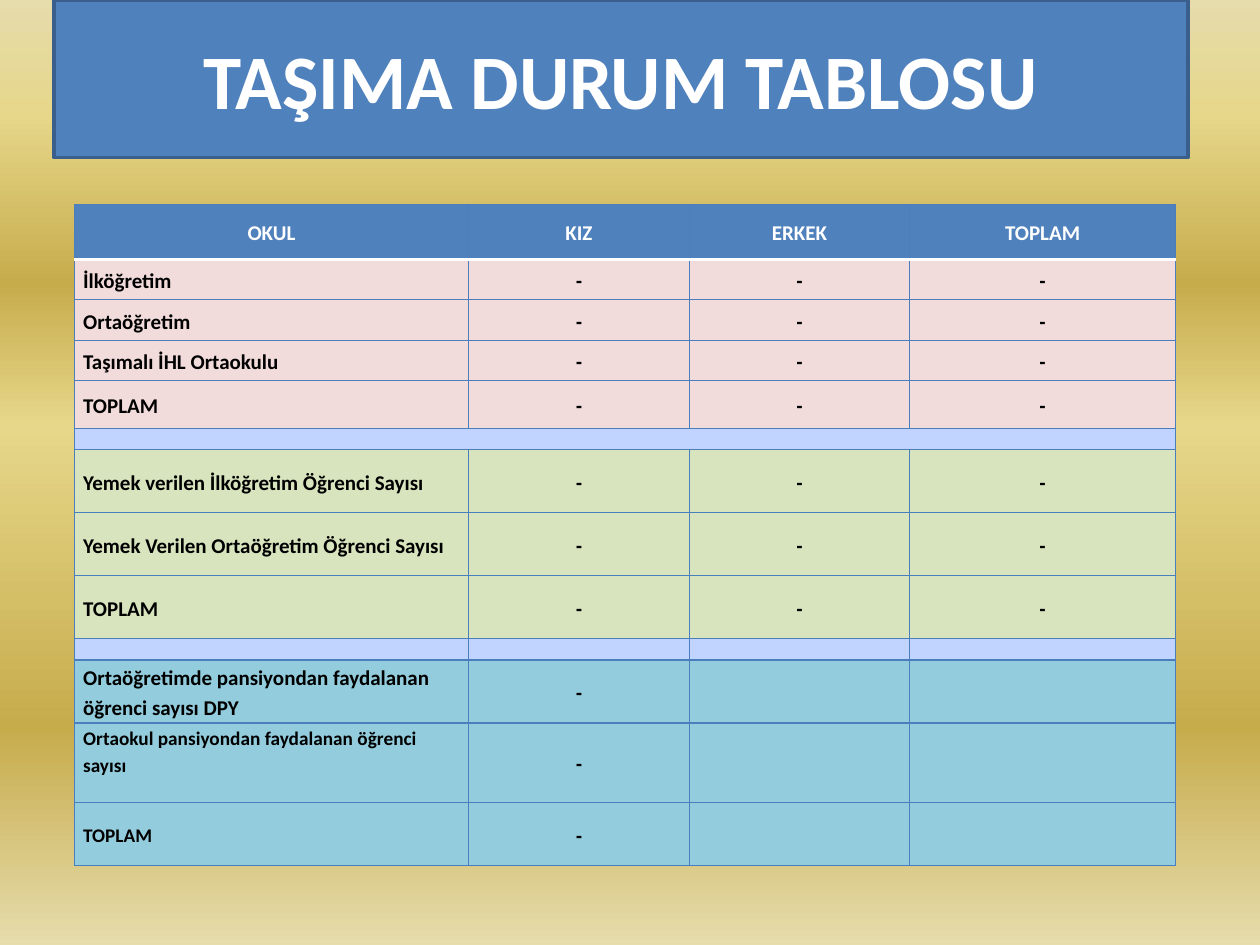
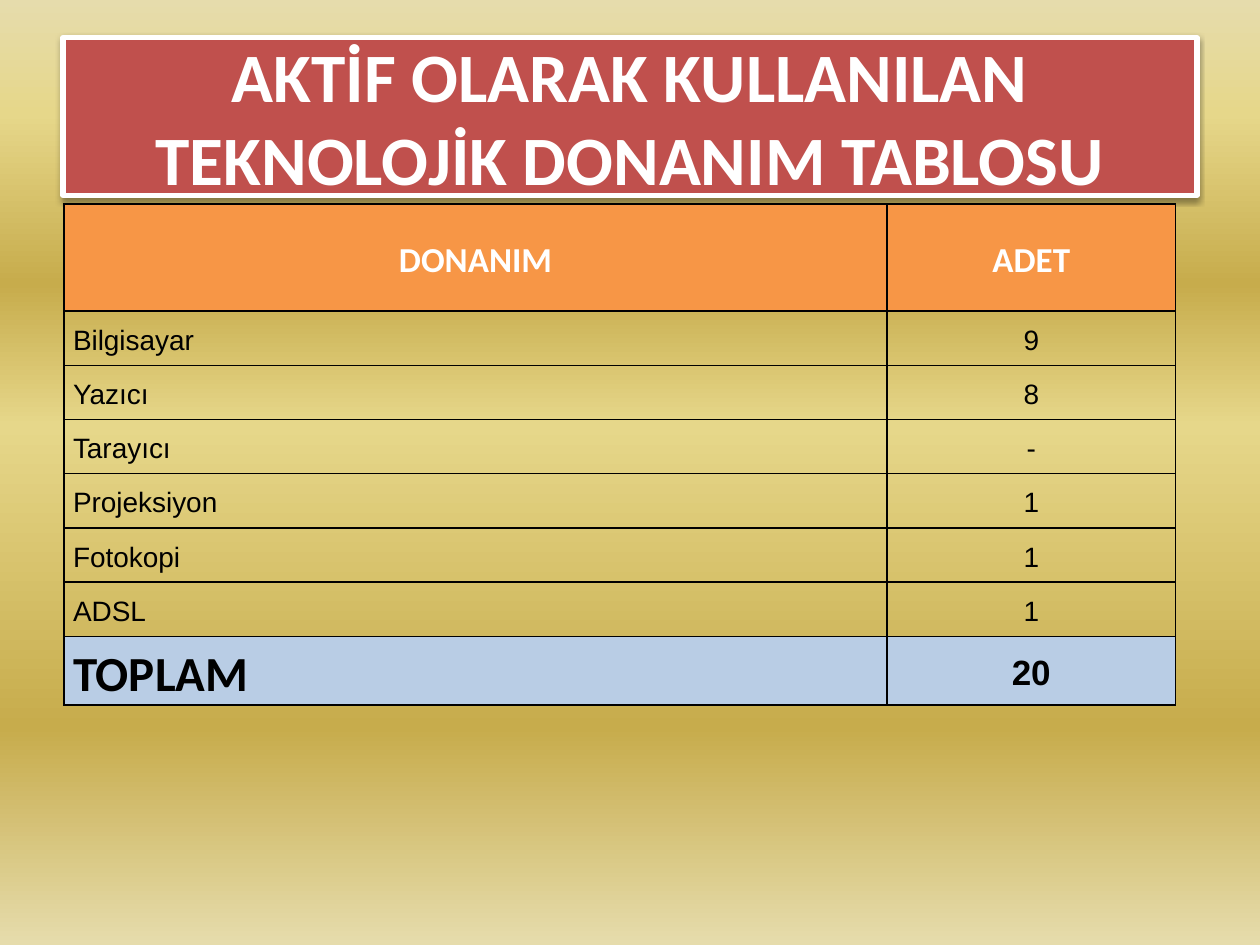
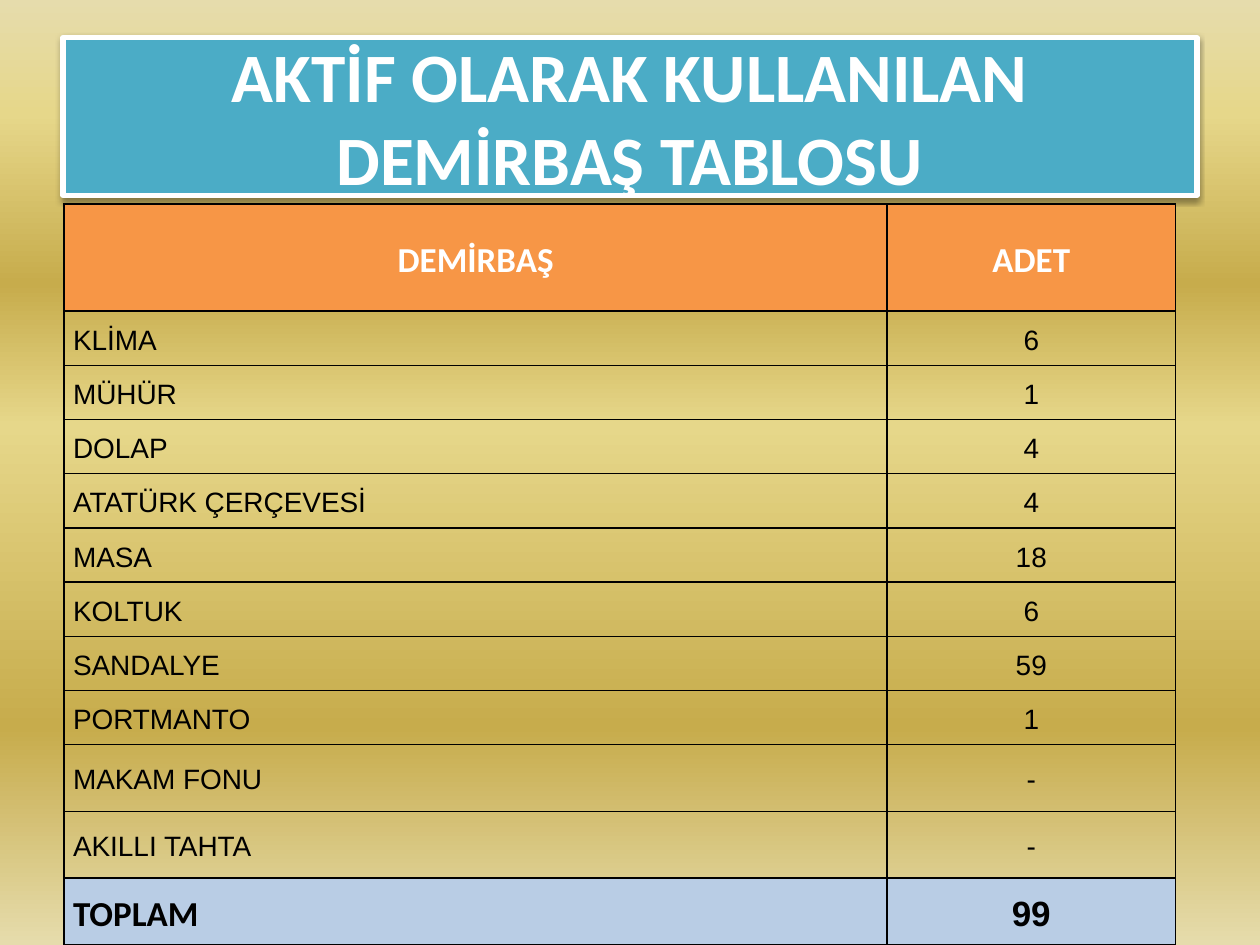
from lxml import etree
from pptx import Presentation
from pptx.dml.color import RGBColor
from pptx.enum import text
from pptx.oxml import ns
from pptx.util import Inches, Pt

WHITE = RGBColor(0xFF, 0xFF, 0xFF)
BLACK = RGBColor(0, 0, 0)
BLUE = RGBColor(0x4F, 0x81, 0xBD)
DARK_BLUE = RGBColor(0x3A, 0x5F, 0x8C)
GRID_BLUE = RGBColor(0x4B, 0x7E, 0xBC)
RED = RGBColor(0xC0, 0x50, 0x4D)
AQUA = RGBColor(0x4B, 0xAC, 0xC6)
ORANGE = RGBColor(0xF7, 0x96, 0x46)
PALE_BLUE = RGBColor(0xB9, 0xCD, 0xE5)
SPACER_BLUE = RGBColor(0xC0, 0xD4, 0xFF)
PINK = RGBColor(0xF2, 0xDC, 0xDB)
GREEN = RGBColor(0xD7, 0xE4, 0xBD)
TEAL = RGBColor(0x93, 0xCD, 0xDD)
GOLD_LIGHT = RGBColor(0xE6, 0xDC, 0xAC)
GOLD = RGBColor(0xE6, 0xD7, 0x8A)
GOLD_DARK = RGBColor(0xC7, 0xAC, 0x4C)
BACKDROP = [(0, GOLD_LIGHT), (12, GOLD), (30, GOLD_DARK),
            (45, GOLD), (77, GOLD_DARK), (100, GOLD_LIGHT)]

HEADING_FONT = "Calibri"
BODY_FONT = "Arial"
CENTER = text.PP_ALIGN.CENTER
LEFT = text.PP_ALIGN.LEFT
MIDDLE = text.MSO_ANCHOR.MIDDLE


def add_xml(parent, tag, **attributes):
    values = {key: str(value) for key, value in attributes.items()}
    return etree.SubElement(parent, ns.qn(tag), values)


def write(frame, words, size=11, font=BODY_FONT, color=BLACK, bold=False,
          align=LEFT, spacing=1.0):
    paragraph = frame.paragraphs[0]
    paragraph.alignment = align
    paragraph.line_spacing = spacing
    if not words:
        # The end mark keeps an empty row from growing to the default size.
        add_xml(paragraph._p, "a:endParaRPr", sz=size * 100)
        return
    run = paragraph.add_run()
    run.text = words
    run.font.size, run.font.name, run.font.bold = Pt(size), font, bold
    run.font.color.rgb = color


def border(cell, **sides):
    """Draw cell borders; each side (L, R, T, B) is a (color, points) pair."""
    properties = cell._tc.get_or_add_tcPr()
    for position, side in enumerate(s for s in "LRTB" if s in sides):
        color, points = sides[side]
        line = add_xml(properties, f"a:ln{side}", w=Pt(points))
        add_xml(add_xml(line, "a:solidFill"), "a:srgbClr", val=color)
        properties.insert(position, line)


class Deck:
    def __init__(self):
        self.presentation = Presentation()
        self.presentation.slide_width = Inches(10)
        self.presentation.slide_height = Inches(7.5)
        self.slide = None
        self.paint_backdrop()

    def paint_backdrop(self):
        fill = self.presentation.slide_master.background.fill
        fill.gradient()
        fill.gradient_angle = 270
        stops = fill._fill._gradFill.find(ns.qn("a:gsLst"))
        for stop in list(stops):
            stops.remove(stop)
        for percent, color in BACKDROP:
            stop = add_xml(stops, "a:gs", pos=percent * 1000)
            add_xml(stop, "a:srgbClr", val=color)

    def new_slide(self):
        title_only = self.presentation.slide_layouts[5]
        self.slide = self.presentation.slides.add_slide(title_only)

    def title(self, words, left, top, size, fill, line, line_width, shadow=False):
        banner = self.slide.shapes.title
        banner.left, banner.top = Inches(left), Inches(top)
        banner.width, banner.height = Inches(9), Inches(1.25)
        banner.fill.solid()
        banner.fill.fore_color.rgb = fill
        banner.line.color.rgb = line
        banner.line.width = Pt(line_width)
        frame = banner.text_frame
        frame.auto_size = text.MSO_AUTO_SIZE.NONE
        frame.word_wrap = True
        frame.vertical_anchor = MIDDLE
        write(frame, words, size=size, font=HEADING_FONT, color=WHITE,
              bold=True, align=CENTER)
        if shadow:
            effects = add_xml(banner._element.spPr, "a:effectLst")
            drop = add_xml(effects, "a:outerShdw", blurRad=Pt(3.1), dist=Pt(1.6),
                           dir=90 * 60000, rotWithShape=0)
            add_xml(add_xml(drop, "a:srgbClr", val=BLACK), "a:alpha", val=38000)

    def table(self, left, columns, heights):
        table = self.slide.shapes.add_table(
            len(heights), len(columns), Inches(left), Inches(1.62),
            Inches(sum(columns)), Inches(sum(heights))).table
        table.first_row = table.horz_banding = False
        for column, width in zip(table.columns, columns):
            column.width = Inches(width)
        for row, height in zip(table.rows, heights):
            row.height = Inches(height)
        return table

    def cell(self, cell, words, fill, edges, anchor=MIDDLE, **style):
        cell.margin_left = cell.margin_right = Inches(0.07)
        cell.margin_top = cell.margin_bottom = 0
        cell.vertical_anchor = anchor
        if fill is None:
            cell.fill.background()
        else:
            cell.fill.solid()
            cell.fill.fore_color.rgb = fill
        border(cell, **edges)
        write(cell.text_frame, words, spacing=1.15, **style)


def transport_slide(deck):
    deck.new_slide()
    deck.title("TAŞIMA DURUM TABLOSU", 0.43, 0, 44, BLUE, DARK_BLUE, 2)
    # Each row: height, fill, label, label size, number of dashes.
    rows = [
        (0.32, PINK, "İlköğretim", 12, 3),
        (0.32, PINK, "Ortaöğretim", 12, 3),
        (0.32, PINK, "Taşımalı İHL Ortaokulu", 12, 3),
        (0.38, PINK, "TOPLAM", 12, 3),
        (0.17, SPACER_BLUE, "", 8, 0),
        (0.5, GREEN, "Yemek verilen İlköğretim Öğrenci Sayısı", 12, 3),
        (0.5, GREEN, "Yemek Verilen Ortaöğretim Öğrenci Sayısı", 12, 3),
        (0.5, GREEN, "TOPLAM", 12, 3),
        (0.17, SPACER_BLUE, "", 8, 0),
        (0.5, TEAL, "Ortaöğretimde pansiyondan faydalanan öğrenci sayısı DPY", 12, 1),
        (0.63, TEAL, "Ortaokul pansiyondan faydalanan öğrenci sayısı", 11, 1),
        (0.5, TEAL, "TOPLAM", 11, 1),
    ]
    table = deck.table(0.59, [3.13, 1.75, 1.75, 2.11],
                       [0.44] + [row[0] for row in rows])
    edges = dict.fromkeys("LRTB", (GRID_BLUE, 0.75))
    rule = (WHITE, 2)
    for column, heading in enumerate(["OKUL", "KIZ", "ERKEK", "TOPLAM"]):
        deck.cell(table.cell(0, column), heading, BLUE, edges | {"B": rule},
                  size=12, font=HEADING_FONT, color=WHITE, bold=True, align=CENTER)
    for index, (_, fill, label, size, dashes) in enumerate(rows, 1):
        row_edges = edges | {"T": rule} if index == 1 else edges
        anchor = text.MSO_ANCHOR.TOP if label.startswith("Ortaokul") else MIDDLE
        deck.cell(table.cell(index, 0), label, fill, row_edges, anchor,
                  size=size, font=HEADING_FONT, bold=True)
        for column in range(1, 4):
            deck.cell(table.cell(index, column), "-" if column <= dashes else "",
                      fill, row_edges, size=min(size, 11), bold=True, align=CENTER)
    table.cell(5, 0).merge(table.cell(5, 3))


def inventory_slide(deck, title, color, heading, items, total, total_size, tall=0):
    """Add a counted list whose last `tall` items have higher rows."""
    deck.new_slide()
    deck.title(title, 0.5, 0.3, 39.6, color, WHITE, 3, shadow=True)
    heights = [0.85] + [0.43] * (len(items) - tall) + [0.53] * (tall + 1)
    table = deck.table(0.51, [6.53, 2.29], heights)
    edges = dict.fromkeys("LRTB", (BLACK, 1))
    for column, words in enumerate([heading, "ADET"]):
        deck.cell(table.cell(0, column), words, ORANGE, edges, size=20,
                  font=HEADING_FONT, color=WHITE, bold=True, align=CENTER)
    for index, (item, count) in enumerate(items, 1):
        deck.cell(table.cell(index, 0), item, None, edges, size=16)
        deck.cell(table.cell(index, 1), count, None, edges, size=16, align=CENTER)
    last = len(items) + 1
    deck.cell(table.cell(last, 0), "TOPLAM", PALE_BLUE, edges,
              size=total_size, font=HEADING_FONT, bold=True)
    deck.cell(table.cell(last, 1), total, PALE_BLUE, edges,
              size=20, bold=True, align=CENTER)


def main():
    deck = Deck()
    transport_slide(deck)
    inventory_slide(
        deck, "AKTİF OLARAK KULLANILAN TEKNOLOJİK DONANIM TABLOSU", RED, "DONANIM",
        [("Bilgisayar", "9"), ("Yazıcı", "8"), ("Tarayıcı", "-"),
         ("Projeksiyon", "1"), ("Fotokopi", "1"), ("ADSL", "1")],
        total="20", total_size=28)
    inventory_slide(
        deck, "AKTİF OLARAK KULLANILAN DEMİRBAŞ TABLOSU", AQUA, "DEMİRBAŞ",
        [("KLİMA", "6"), ("MÜHÜR", "1"), ("DOLAP", "4"), ("ATATÜRK ÇERÇEVESİ", "4"),
         ("MASA", "18"), ("KOLTUK", "6"), ("SANDALYE", "59"), ("PORTMANTO", "1"),
         ("MAKAM FONU", "-"), ("AKILLI TAHTA", "-")],
        total="99", total_size=20, tall=2)
    deck.presentation.save("out.pptx")


if __name__ == "__main__":
    main()
